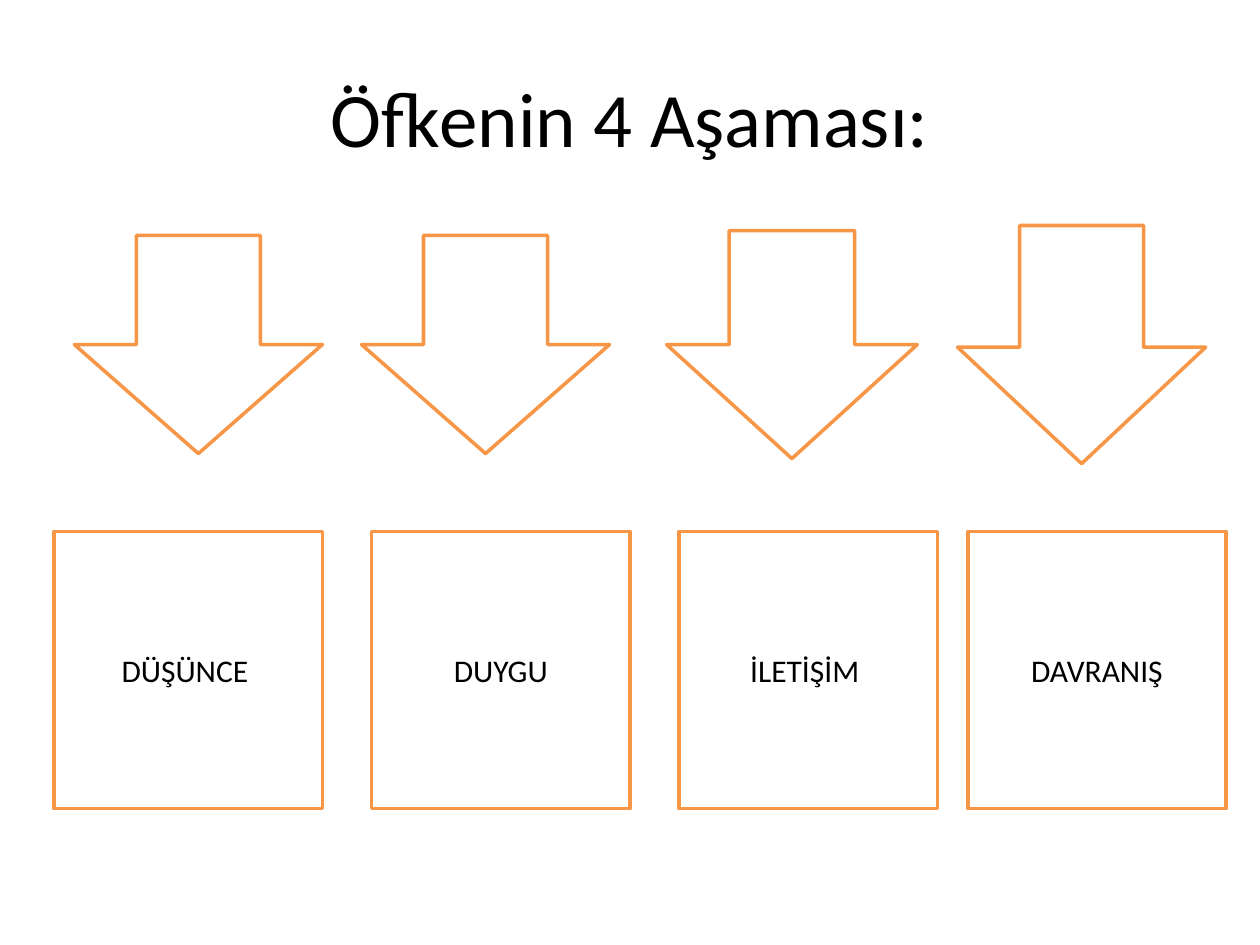
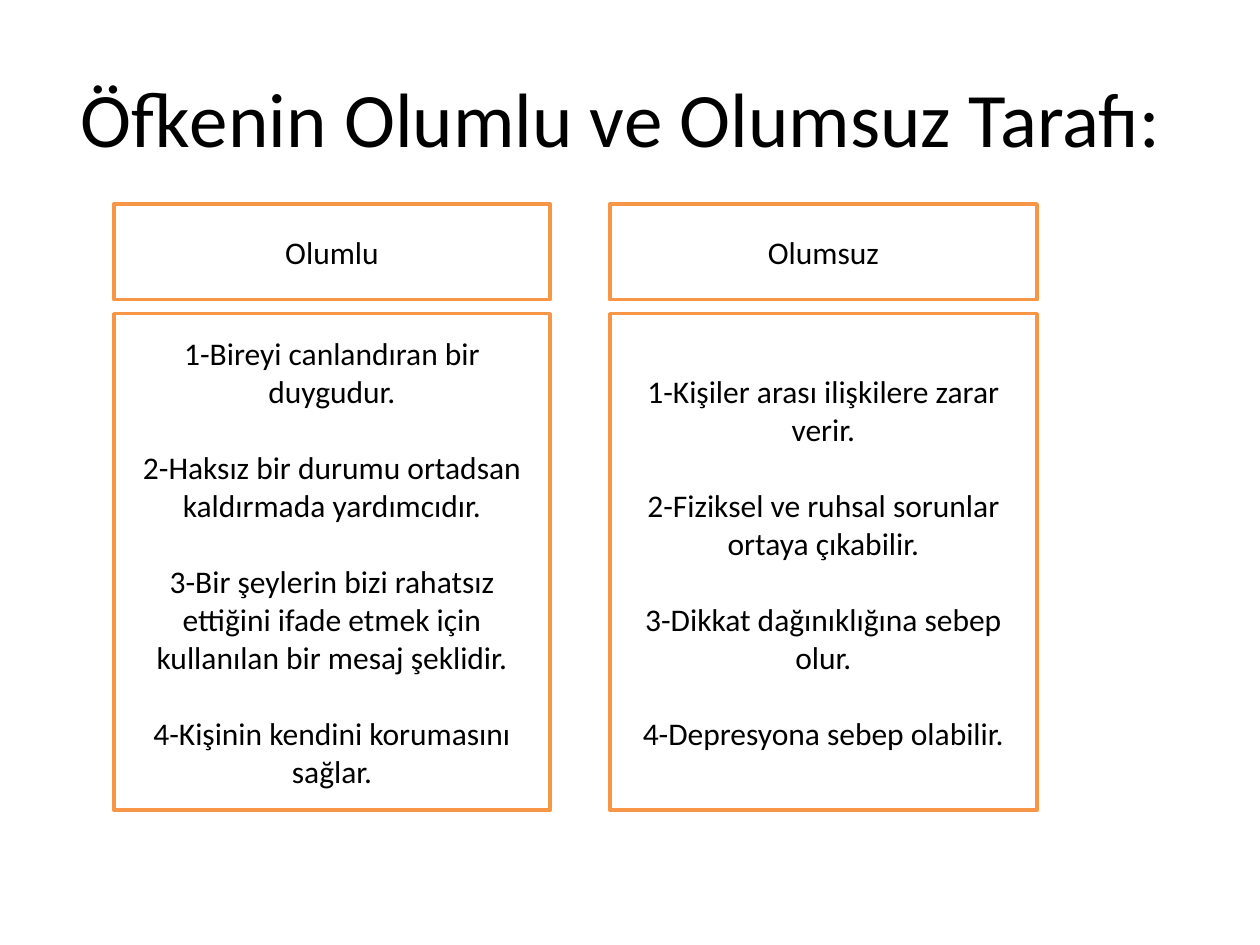
from pptx import Presentation
from pptx.dml.color import RGBColor
from pptx.enum.shapes import MSO_SHAPE
from pptx.enum.text import MSO_ANCHOR, PP_ALIGN
from pptx.util import Pt

WHITE = RGBColor(0xFF, 0xFF, 0xFF)
BLACK = RGBColor(0x00, 0x00, 0x00)
ORANGE = RGBColor(0xF7, 0x96, 0x46)
FONT = "Calibri"
RECTANGLE = MSO_SHAPE.RECTANGLE
DOWN_ARROW = MSO_SHAPE.DOWN_ARROW
CENTER = PP_ALIGN.CENTER
MIDDLE = MSO_ANCHOR.MIDDLE
TITLE_ONLY = 5
LINE_GAP = 22  # one line of 18 pt text

deck = Presentation()
deck.slide_width, deck.slide_height = Pt(720), Pt(540)


def add_titled_slide(heading):
    slide = deck.slides.add_slide(deck.slide_layouts[TITLE_ONLY])
    title = slide.shapes.title
    title.left, title.top, title.width, title.height = Pt(36), Pt(21.6), Pt(648), Pt(90)
    title.text_frame.text = heading
    title.text_frame.vertical_anchor = MIDDLE
    paragraph = title.text_frame.paragraphs[0]
    paragraph.alignment = CENTER
    font = paragraph.runs[0].font
    font.name, font.size, font.color.rgb = FONT, Pt(44), BLACK
    return slide


def add_outlined(slide, kind, left, top, width, height, lines=()):
    outlined = slide.shapes.add_shape(kind, Pt(left), Pt(top), Pt(width), Pt(height))
    outlined.shadow.inherit = False
    outlined.fill.solid()
    outlined.fill.fore_color.rgb = WHITE
    outlined.line.color.rgb = ORANGE
    outlined.line.width = Pt(2)
    frame = outlined.text_frame
    frame.word_wrap = True
    frame.vertical_anchor = MIDDLE
    for number, line in enumerate(lines):
        paragraph = frame.add_paragraph() if number else frame.paragraphs[0]
        paragraph.text = line
        paragraph.alignment = CENTER
        paragraph.space_before = Pt(LINE_GAP if number else 0)
        font = paragraph.runs[0].font
        font.name, font.size, font.color.rgb = FONT, Pt(18), BLACK
    return outlined


# Slide 1: an arrow above each stage of anger
stages_slide = add_titled_slide("Öfkenin 4 Aşaması:")
ARROW_MIDDLE = 196.9
arrows = [  # left, width, height, head ratio
    (42.5, 141.8, 124.6, 0.5),
    (206.6, 141.8, 124.6, 0.5),
    (380.9, 143.3, 130.3, 0.5),
    (547.2, 141.8, 136.1, 0.489),
]
for left, width, height, head in arrows:
    arrow = add_outlined(stages_slide, DOWN_ARROW, left, ARROW_MIDDLE - height / 2, width, height)
    arrow.adjustments[1] = head

stages = [  # name, left, width
    ("DÜŞÜNCE ", 31, 153.4),
    ("DUYGU", 212.4, 147.6),
    ("İLETİŞİM ", 388.1, 147.6),
    ("DAVRANIŞ", 553, 147.6),
]
for stage, left, width in stages:
    add_outlined(stages_slide, RECTANGLE, left, 303.8, width, 158.4, [stage])

# Slide 2: positive and negative sides in two columns
sides_slide = add_titled_slide("Öfkenin Olumlu ve Olumsuz Tarafı: ")
sides = [  # heading, left, width, effects
    ("Olumlu", 65.2, 249.1, [
        "1-Bireyi canlandıran bir duygudur.",
        "2-Haksız bir durumu ortadsan kaldırmada yardımcıdır.",
        "3-Bir şeylerin bizi rahatsız ettiğini ifade etmek için kullanılan bir mesaj şeklidir.",
        "4-Kişinin kendini korumasını sağlar.",
    ]),
    ("Olumsuz", 348.5, 244.1, [
        "1-Kişiler arası ilişkilere zarar verir.",
        "2-Fiziksel ve ruhsal sorunlar ortaya çıkabilir.",
        "3-Dikkat dağınıklığına sebep olur.",
        "4-Depresyona sebep olabilir.",
    ]),
]
for heading, left, width, effects in sides:
    add_outlined(sides_slide, RECTANGLE, left, 179.3, width, 283.7, effects)
    add_outlined(sides_slide, RECTANGLE, left, 116.6, width, 54.7, [heading])

deck.save("out.pptx")
